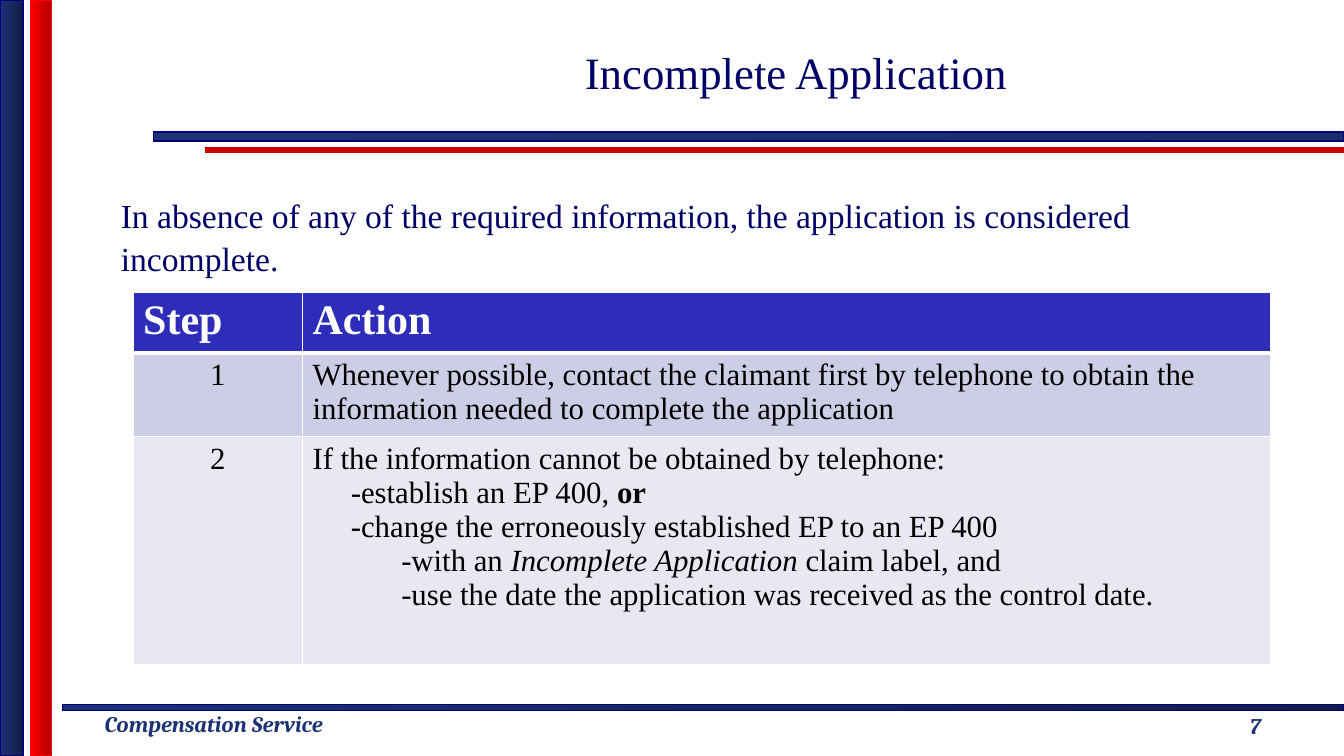
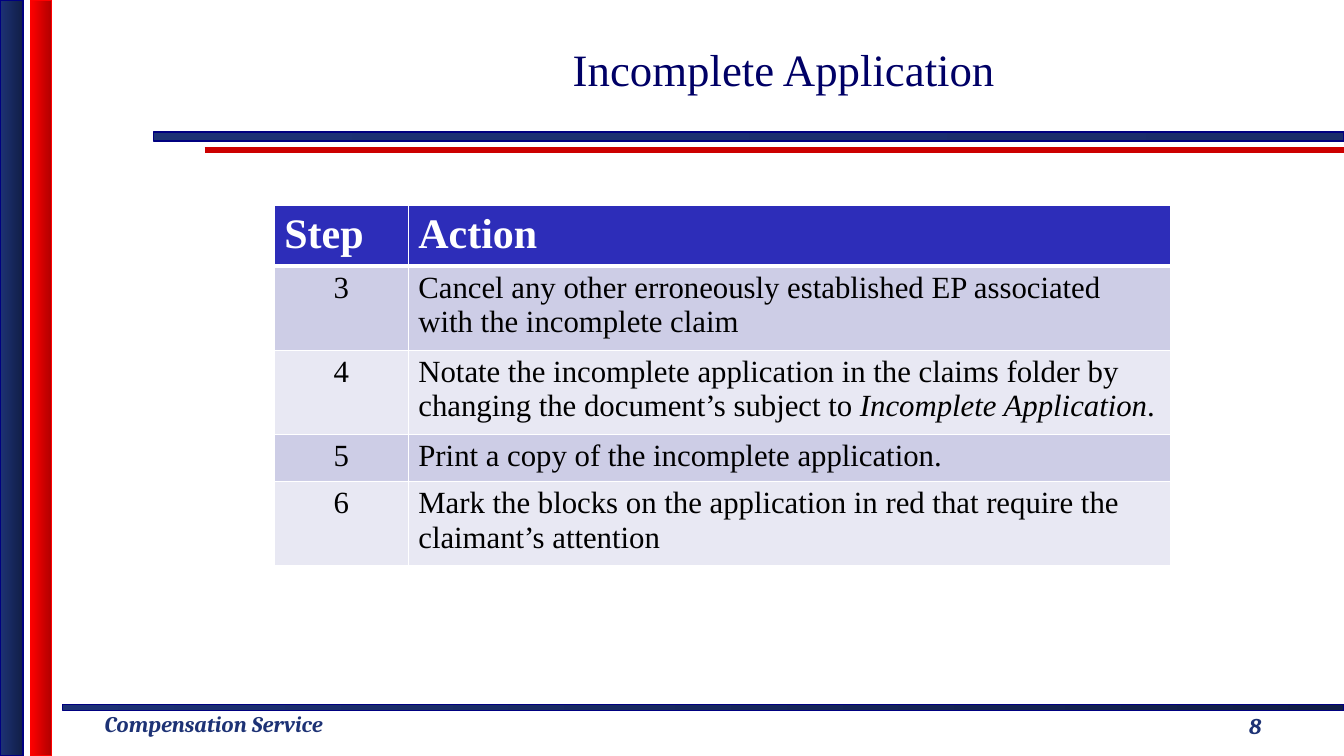
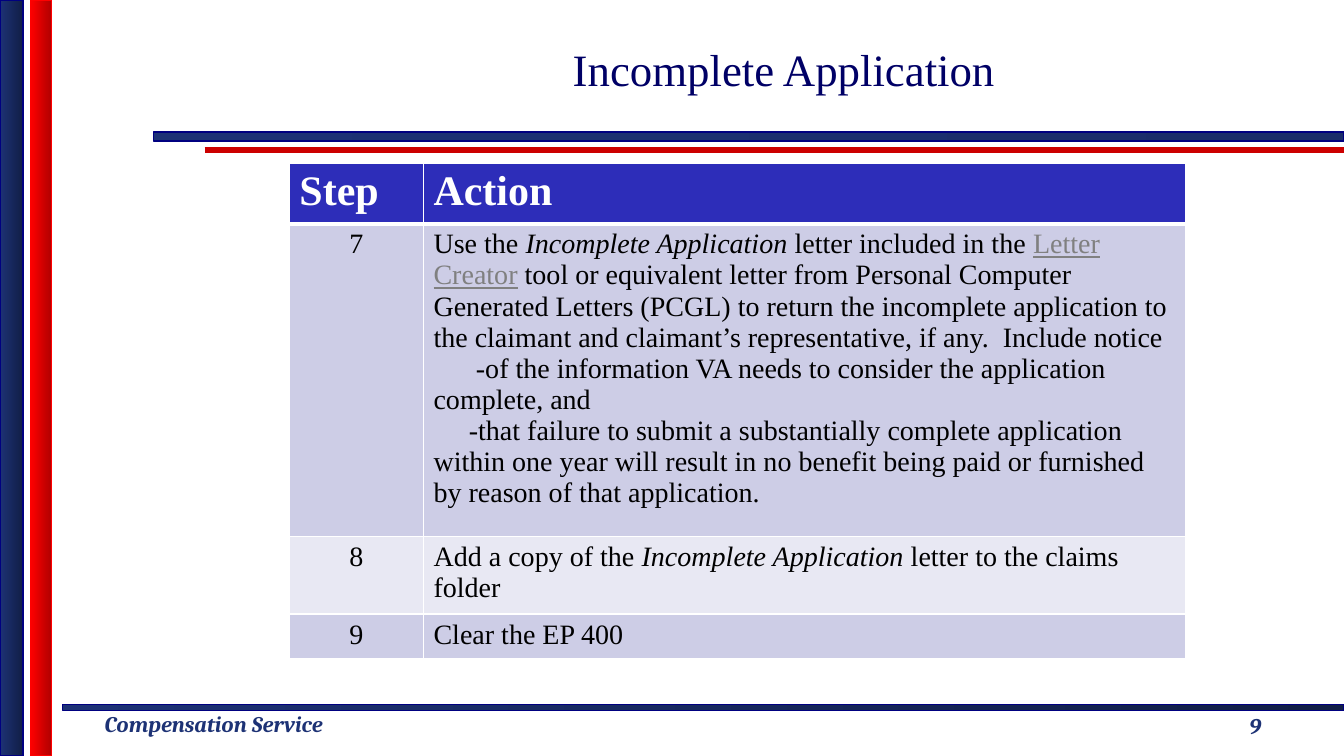
from lxml import etree
from pptx import Presentation
from pptx.dml.color import RGBColor
from pptx.enum.shapes import MSO_CONNECTOR, MSO_SHAPE
from pptx.enum.text import MSO_ANCHOR, PP_ALIGN
from pptx.oxml.ns import qn
from pptx.util import Inches, Pt

LEFT, CENTER = PP_ALIGN.LEFT, PP_ALIGN.CENTER
TOP, MIDDLE = MSO_ANCHOR.TOP, MSO_ANCHOR.MIDDLE
RECTANGLE, STRAIGHT = MSO_SHAPE.RECTANGLE, MSO_CONNECTOR.STRAIGHT

SLIDE_W, SLIDE_H = 13.33, 7.5
SERIF, FOOTER_FONT = "Times New Roman", "Cambria"
INK, NAVY, NAVY_EDGE, NAVY_DARK = "000066", "1D3275", "000080", "111E46"
RED, RED_DARK, RULE_RED = "FF0000", "B20000", "CC0000"
HEADER_FILL, ROW_FILLS = "2D2DB9", ("CDCDE6", "E8E8F3")
WHITE, BLACK, LINK_GRAY = "FFFFFF", "000000", "808080"
MASTER_SPACING = 1.08

BANDS = [
    ((0.62, 6.99, 12.71, 0.06), NAVY, NAVY_DARK, NAVY_EDGE),
    ((1.52, 1.31, 11.81, 0.09), NAVY, "1A2D69", NAVY_EDGE),
    ((0, 0, 0.23, SLIDE_H), NAVY, NAVY_DARK, NAVY_EDGE),
    ((0.3, 0, 0.21, SLIDE_H), RED, RED_DARK, RED),
]

FORM_NAME = ("Incomplete Application", {"italic": True})


def rgb(value):
    return RGBColor.from_string(value)


def inches(box):
    return [Inches(length) for length in box]


def add_run(paragraph, text, size, color, font=SERIF, bold=False, italic=False, underline=False):
    run = paragraph.add_run()
    run.text = text
    run.font.name = font
    run.font.size = Pt(size)
    run.font.color.rgb = rgb(color)
    run.font.bold = bold
    run.font.italic = italic
    run.font.underline = underline


def add_text(slide, box, text, size, color, align=LEFT, anchor=TOP, wrap=True, spacing=1.0, **style):
    frame = slide.shapes.add_textbox(*inches(box)).text_frame
    frame.word_wrap = wrap
    frame.vertical_anchor = anchor
    paragraph = frame.paragraphs[0]
    paragraph.alignment = align
    paragraph.line_spacing = spacing
    add_run(paragraph, text, size, color, **style)


def add_band(slide, box, start, end, edge):
    band = slide.shapes.add_shape(RECTANGLE, *inches(box))
    band.shadow.inherit = False
    band.fill.gradient()
    band.fill.gradient_angle = 0
    for stop, color in zip(band.fill.gradient_stops, (start, end)):
        stop.color.rgb = rgb(color)
    band.line.color.rgb = rgb(edge)
    band.line.width = Pt(1)


def add_frame(slide, number):
    rule = slide.shapes.add_connector(STRAIGHT, *inches((2.03, 1.49, SLIDE_W, 1.49)))
    rule.line.color.rgb = rgb(RULE_RED)
    rule.line.width = Pt(4)
    etree.SubElement(rule._element.spPr, qn("a:effectLst"))
    for band in BANDS:
        add_band(slide, *band)
    footer = {"font": FOOTER_FONT, "bold": True, "italic": True}
    add_text(slide, (0.94, 7, 2.82, 0.37), "Compensation Service", 16, NAVY, wrap=False, **footer)
    add_text(slide, (11.56, 6.95, 1.78, 0.5), str(number), 16, NAVY, CENTER, MIDDLE, **footer)


def set_borders(cell, bottom):
    properties = cell._tc.get_or_add_tcPr()
    widths = {"lnL": 1, "lnR": 1, "lnT": 1, "lnB": bottom}
    for place, (side, width) in enumerate(widths.items()):
        border = etree.Element(qn("a:" + side), w=str(Pt(width)))
        fill = etree.SubElement(border, qn("a:solidFill"))
        etree.SubElement(fill, qn("a:srgbClr"), val=WHITE)
        properties.insert(place, border)


def fill_cell(cell, lines, size, color, fill, align=LEFT, bold=False, bottom=1):
    cell.fill.solid()
    cell.fill.fore_color.rgb = rgb(fill)
    set_borders(cell, bottom)
    frame = cell.text_frame
    for index, (margin, indent, runs) in enumerate(lines):
        paragraph = frame.add_paragraph() if index else frame.paragraphs[0]
        paragraph.alignment = align
        properties = paragraph._p.get_or_add_pPr()
        properties.set("marL", str(Inches(margin)))
        properties.set("indent", str(Inches(indent)))
        for text, style in runs:
            add_run(paragraph, text, size, **{"color": color, "bold": bold, **style})


def line(*parts, margin=0, indent=0):
    return margin, indent, [(part, {}) if isinstance(part, str) else part for part in parts]


def add_steps(slide, origin, columns, heights, first_step, actions, size):
    box = (*origin, sum(columns), sum(heights))
    table = slide.shapes.add_table(len(heights), len(columns), *inches(box)).table
    table.first_row = table.horz_banding = False
    for column, width in zip(table.columns, columns):
        column.width = Inches(width)
    for row, height in zip(table.rows, heights):
        row.height = Inches(height)
    for column, heading in enumerate(("Step", "Action")):
        fill_cell(table.cell(0, column), [line(heading)], 30, WHITE, HEADER_FILL, bold=True, bottom=3)
    for index, action in enumerate(actions):
        fill = ROW_FILLS[index % 2]
        step = [line(str(first_step + index))]
        fill_cell(table.cell(index + 1, 0), step, size, BLACK, fill, CENTER)
        fill_cell(table.cell(index + 1, 1), action, size, BLACK, fill)


def add_step_slide(deck, number, title_at, steps, intro=None):
    slide = deck.slides.add_slide(deck.slide_layouts[6])
    add_frame(slide, number)
    if intro:
        add_text(slide, (1.1, 1.85, 10.55, 1.0), intro, 24, INK, spacing=MASTER_SPACING)
    add_text(slide, (*title_at, 10.63, 0.64), "Incomplete Application", 32, INK, CENTER,
             spacing=MASTER_SPACING)
    add_steps(slide, **steps)


FIRST_STEPS = {
    "origin": (1.32, 2.9), "columns": (1.68, 9.6), "heights": (0.6, 0.83, 2.26),
    "first_step": 1, "size": 22,
    "actions": [
        [line("Whenever possible, contact the claimant first by telephone to obtain the "
              "information needed to complete the application")],
        [line("If the information cannot be obtained by telephone:"),
         line("-establish an EP 400, ", ("or", {"bold": True}), indent=0.38),
         line("-change the erroneously established EP to an EP 400", indent=0.38),
         line("-with an ", FORM_NAME, " claim label, and", margin=0.5, indent=0.38),
         line("-use the date the application was received as the control date.",
              margin=0.5, indent=0.38)],
    ],
}

MIDDLE_STEPS = {
    "origin": (2.72, 2.04), "columns": (1.33, 7.56), "heights": (0.6, 0.83, 0.83, 0.47, 0.83),
    "first_step": 3, "size": 22,
    "actions": [
        [line("Cancel any other erroneously established EP associated with the incomplete claim")],
        [line("Notate the incomplete application in the claims folder by changing the "
              "document’s subject to ", FORM_NAME, ".")],
        [line("Print a copy of the incomplete application.")],
        [line("Mark the blocks on the application in red that require the claimant’s attention")],
    ],
}

LAST_STEPS = {
    "origin": (2.87, 1.62), "columns": (1.33, 7.56), "heights": (0.6, 3.09, 0.77, 0.44),
    "first_step": 7, "size": 20,
    "actions": [
        [line("Use the ", FORM_NAME, " letter included in the ",
              ("Letter Creator", {"color": LINK_GRAY, "underline": True}),
              " tool or equivalent letter from Personal Computer Generated Letters (PCGL) to "
              "return the incomplete application to the claimant and claimant’s "
              "representative, if any.  Include notice"),
         line("-of the information VA needs to consider the application complete, and",
              indent=0.42),
         line("-that failure to submit a substantially complete application within one year "
              "will result in no benefit being paid or furnished by reason of that application.",
              indent=0.35)],
        [line("Add a copy of the ", FORM_NAME, " letter to the claims folder")],
        [line("Clear the EP 400")],
    ],
}


def main():
    deck = Presentation()
    deck.slide_width, deck.slide_height = inches((SLIDE_W, SLIDE_H))
    add_step_slide(deck, 7, (2.58, 0.35), FIRST_STEPS,
                   "In absence of any of the required information, "
                   "the application is considered incomplete.")
    add_step_slide(deck, 8, (2.46, 0.32), MIDDLE_STEPS)
    add_step_slide(deck, 9, (2.46, 0.32), LAST_STEPS)
    deck.save("out.pptx")


if __name__ == "__main__":
    main()
